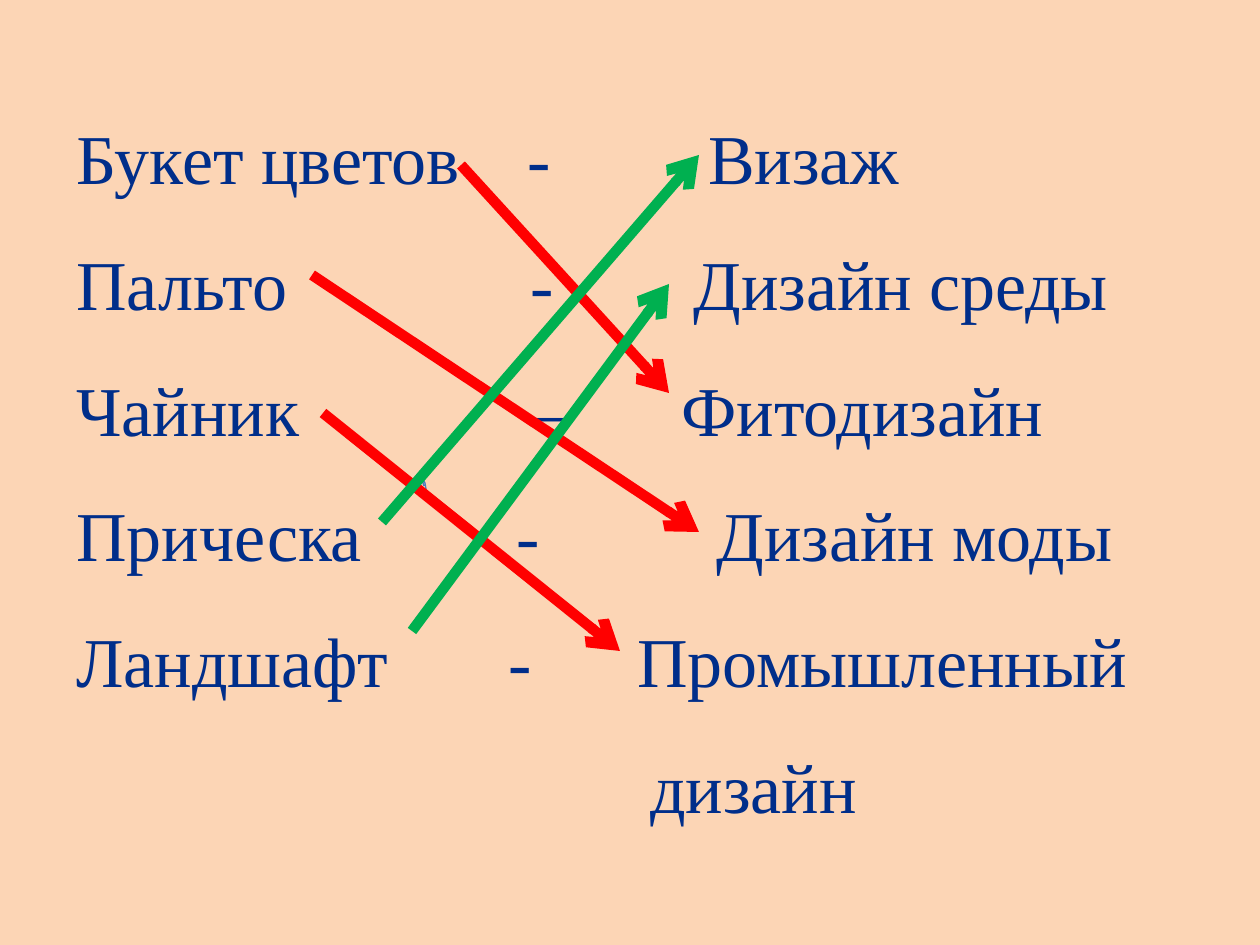
from pptx import Presentation
from pptx.dml.color import RGBColor
from pptx.enum.shapes import MSO_CONNECTOR
from pptx.enum.text import MSO_AUTO_SIZE
from pptx.oxml.ns import qn
from pptx.util import Pt
from lxml import etree

STRAIGHT = MSO_CONNECTOR.STRAIGHT
GROW = MSO_AUTO_SIZE.SHAPE_TO_FIT_TEXT
EMU_PER_PX = 914400 / 126

THEME = {
    "background": RGBColor(0xFC, 0xD5, 0xB5),
    "red": RGBColor(0xFF, 0x00, 0x00),
    "green": RGBColor(0x00, 0xB0, 0x50),
    "stroke": RGBColor(0x4B, 0x7E, 0xBC),
    "arrow_width": Pt(6),
    "stroke_width": Pt(0.75),
    "text": {"name": "Times New Roman", "size": Pt(40)},
    "text_color": RGBColor(0x00, 0x2E, 0x8A),
}


def px(value):
    return round(value * EMU_PER_PX)


def add_arrow(page, start, end, color):
    arrow = page.shapes.add_connector(STRAIGHT, *map(px, start + end))
    arrow.line.color.rgb = THEME[color]
    arrow.line.width = THEME["arrow_width"]
    etree.SubElement(arrow.line._get_or_add_ln(), qn("a:tailEnd"), type="arrow")
    etree.SubElement(arrow._element.spPr, qn("a:effectLst"))


deck = Presentation()
deck.slide_width, deck.slide_height = px(1260), px(945)
page = deck.slides.add_slide(deck.slide_layouts[6])
page.background.fill.solid()
page.background.fill.fore_color.rgb = THEME["background"]

# Word pairs: each line with the tab stops of its columns
TEXT_LEFT = 77
rows = [
    ("Букет цветов\t-\tВизаж", (528, 709)),
    ("Пальто\t-\tДизайн среды", (531, 694)),
    ("Чайник\t–\tФитодизайн", (534, 682)),
    ("Прическа\t-\tДизайн моды", (517, 717)),
    ("Ландшафт\t-\tПромышленный", (509, 638)),
    ("\tдизайн", (651,)),
]
box = page.shapes.add_textbox(px(64), px(66), px(1145), px(814))
frame = box.text_frame
frame.word_wrap = True
frame.auto_size = GROW
for index, (words, stops) in enumerate(rows):
    para = frame.paragraphs[0] if index == 0 else frame.add_paragraph()
    para.line_spacing = 1.5
    tabs = etree.SubElement(para._p.get_or_add_pPr(), qn("a:tabLst"))
    for stop in stops:
        etree.SubElement(tabs, qn("a:tab"), pos=str(px(stop - TEXT_LEFT)), algn="l")
    span = para.add_run()
    span.text = words
    for name, value in THEME["text"].items():
        setattr(span.font, name, value)
    span.font.color.rgb = THEME["text_color"]

# Upper red arrows
add_arrow(page, (461, 165), (669, 393), "red")
add_arrow(page, (312, 275), (699, 532), "red")

# Small pen stroke
builder = page.shapes.build_freeform(420, 495, scale=EMU_PER_PX)
builder.add_line_segments(
    [(424, 493), (426, 489), (425, 483), (420, 474), (424, 486)], close=False)
stroke = builder.convert_to_shape()
stroke.shadow.inherit = False
stroke.fill.background()
stroke.line.color.rgb = THEME["stroke"]
stroke.line.width = THEME["stroke_width"]

# Lower red arrow and the green arrows
add_arrow(page, (323, 413), (620, 651), "red")
add_arrow(page, (382, 522), (699, 155), "green")
add_arrow(page, (412, 631), (669, 284), "green")

deck.save("out.pptx")
